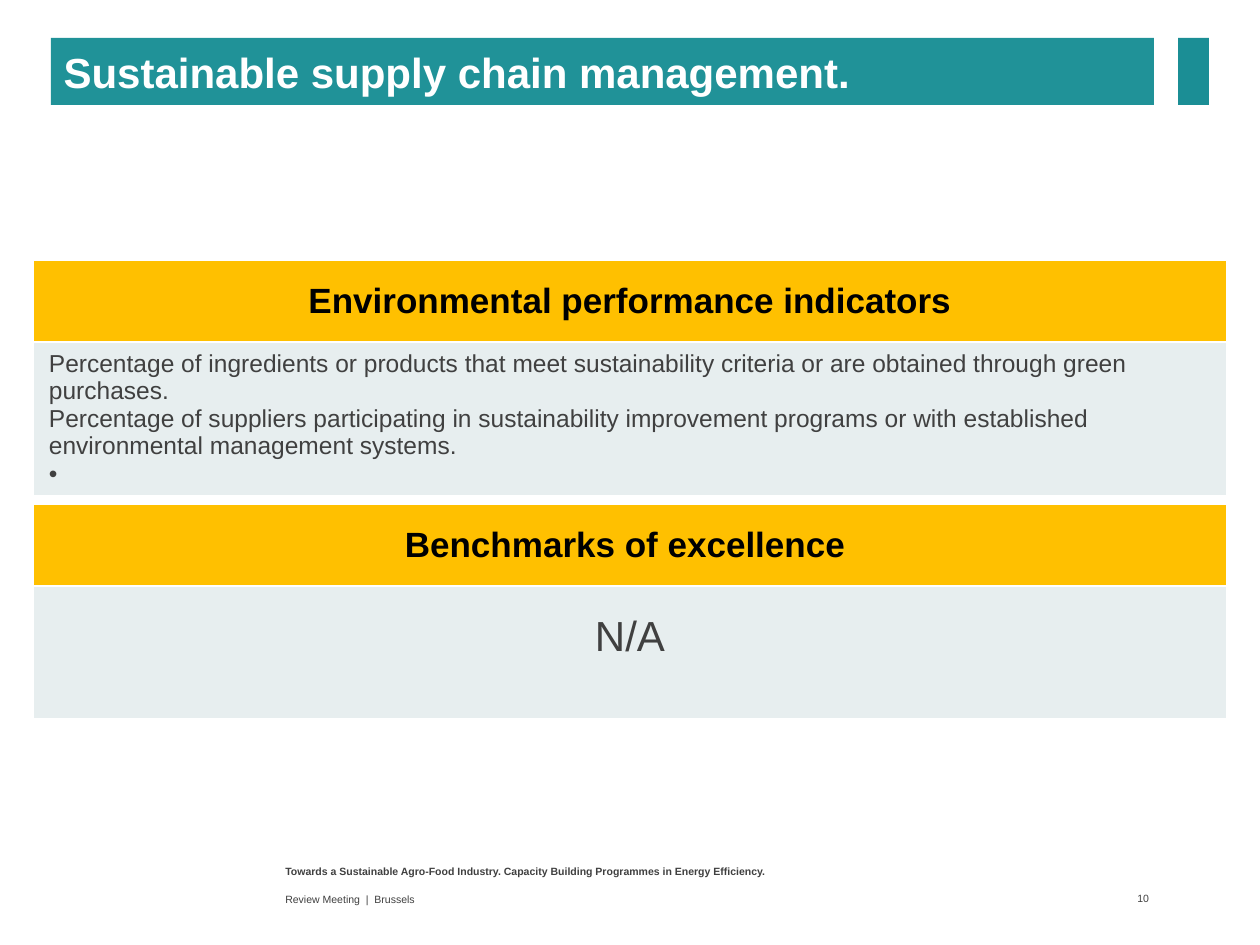
from lxml import etree
from pptx import Presentation
from pptx.dml.color import RGBColor
from pptx.enum.shapes import MSO_SHAPE
from pptx.enum.text import MSO_ANCHOR, MSO_AUTO_SIZE, PP_ALIGN
from pptx.oxml.ns import qn
from pptx.util import Pt

LEFT, CENTER, RIGHT = PP_ALIGN.LEFT, PP_ALIGN.CENTER, PP_ALIGN.RIGHT
TOP, MIDDLE = MSO_ANCHOR.TOP, MSO_ANCHOR.MIDDLE

TEAL = RGBColor(0x20, 0x92, 0x98)
DARK_TEAL = RGBColor(0x1B, 0x8E, 0x95)
AMBER = RGBColor(0xFF, 0xC0, 0x00)
PALE = RGBColor(0xE7, 0xEE, 0xEF)
GREY = RGBColor(0x40, 0x40, 0x40)
BLACK = RGBColor(0, 0, 0)
WHITE = RGBColor(0xFF, 0xFF, 0xFF)


def px(*values):
    """Turn pixels (126 to the inch) into a list of EMU."""
    return [round(v * 914400 / 126) for v in values]


def write(tf, lines, size, color, bold=False, align=LEFT):
    for i, line in enumerate(lines):
        p = tf.paragraphs[0] if i == 0 else tf.add_paragraph()
        p.alignment = align
        r = p.add_run()
        r.text = line
        r.font.name = "Arial"
        r.font.size = Pt(size)
        r.font.bold = bold
        r.font.color.rgb = color


prs = Presentation()
prs.slide_width, prs.slide_height = px(1260, 945)
s = prs.slides.add_slide(prs.slide_layouts[5])

# Title bar and accent block
title = s.shapes.title
title.left, title.top, title.width, title.height = px(51, 38, 1103, 67)
title.fill.solid()
title.fill.fore_color.rgb = TEAL
tf = title.text_frame
tf.auto_size = MSO_AUTO_SIZE.NONE
tf.vertical_anchor = MIDDLE
write(tf, ["Sustainable supply chain management."], 24, WHITE, True)

accent = s.shapes.add_shape(MSO_SHAPE.RECTANGLE, *px(1178, 38, 31, 67))
accent.shadow.inherit = False
accent.fill.solid()
accent.fill.fore_color.rgb = DARK_TEAL
accent.line.fill.background()

# Tables: top, body height, body top margin, heading, body lines, size, alignment
INDICATORS = [
    "Percentage of ingredients or products that meet sustainability criteria "
    "or are obtained through green purchases.",
    "Percentage of suppliers participating in sustainability improvement "
    "programs or with established environmental management systems.",
    "•",
]
TABLES = [
    (260, 152, 8, "Environmental performance indicators", INDICATORS, 14, LEFT),
    (504, 133, 28, "Benchmarks of excellence ", ["N/A"], 24, CENTER),
]
HEAD_H = 82
for top, body_h, body_margin, heading, lines, size, align in TABLES:
    frame = s.shapes.add_table(2, 1, *px(33, top, 1194, HEAD_H + body_h))
    table = frame.table
    table.rows[0].height, table.rows[1].height = px(HEAD_H, body_h)
    head, body = table.cell(0, 0), table.cell(1, 0)
    head.vertical_anchor = MIDDLE
    write(head.text_frame, [heading], 20, BLACK, True, CENTER)
    body.margin_left, body.margin_right, body.margin_top, body.margin_bottom = px(
        16, 16, body_margin, 8)
    write(body.text_frame, lines, size, GREY, align=align)
    for cell, fill in ((head, AMBER), (body, PALE)):
        tc_pr = cell._tc.get_or_add_tcPr()
        for side in ("a:lnL", "a:lnR", "a:lnT", "a:lnB"):
            ln = etree.SubElement(tc_pr, qn(side), w=str(Pt(1)))
            solid = etree.SubElement(ln, qn("a:solidFill"))
            etree.SubElement(solid, qn("a:srgbClr"), val=str(WHITE))
        cell.fill.solid()
        cell.fill.fore_color.rgb = fill

# Footer: box, text, bold, alignment, anchor, right inset
FOOTER = [
    ((273, 859, 693, 26), "Towards a Sustainable Agro-Food Industry. "
     "Capacity Building Programmes in Energy Efficiency.", True, LEFT, TOP, 13),
    ((273, 887, 693, 24), "Review Meeting  |  Brussels", False, LEFT, MIDDLE, 13),
    ((1084, 886, 70, 25), "10", False, RIGHT, MIDDLE, 5),
]
for box, text, bold, align, anchor, inset in FOOTER:
    tf = s.shapes.add_textbox(*px(*box)).text_frame
    tf.word_wrap = True
    tf.vertical_anchor = anchor
    tf.margin_right = px(inset)[0]
    write(tf, [text], 6, GREY, bold, align)

prs.save("out.pptx")
